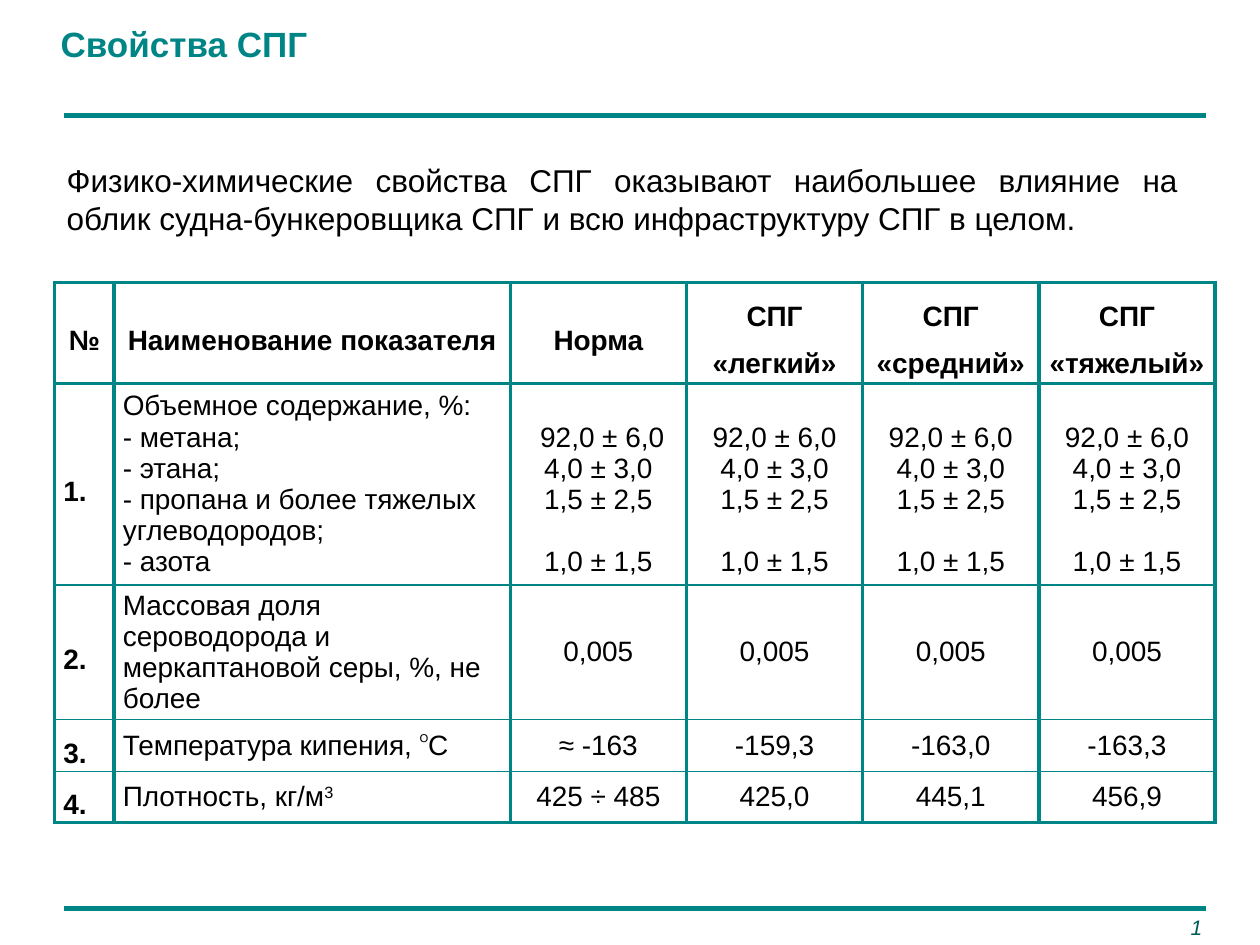
from lxml.etree import SubElement
from pptx import Presentation
from pptx.dml.color import RGBColor
from pptx.enum.shapes import MSO_CONNECTOR
from pptx.enum.text import MSO_ANCHOR as Anchor, PP_ALIGN as Align
from pptx.oxml.ns import qn
from pptx.util import Pt

TEAL, DARK_TEAL, BLACK = "008587", "00595A", "000000"
TITLE = "Свойства СПГ"
INTRO = ("Физико-химические свойства СПГ оказывают наибольшее влияние на облик "
         "судна-бункеровщика СПГ и всю инфраструктуру СПГ в целом.")
HEADER = ["№", "Наименование показателя", "Норма",
          "СПГ\n«легкий»", "СПГ\n«средний»", "СПГ\n«тяжелый»"]
SHARES = "92,0 ± 6,0\n4,0 ± 3,0\n1,5 ± 2,5\n1,0 ± 1,5"
PROPERTIES = [
    ["1.", "Объемное содержание, %:\n- метана;\n- этана;\n"
     "- пропана и более тяжелых углеводородов;\n- азота",
     " " + SHARES, SHARES, SHARES, SHARES],
    ["2.", "Массовая доля сероводорода и меркаптановой серы, %, не более"] + ["0,005"] * 4,
    ["3.", "Температура кипения, ^ᴼ^С", "≈ -163", "-159,3", "-163,0", "-163,3"],
    ["4.", "Плотность, кг/м^3^", "425 ÷ 485", "425,0", "445,1", "456,9"],
]
COLUMN_WIDTHS = [34, 226.4] + [100.7] * 4
ROW_HEIGHTS = [57.7, 114.9, 77.1, 29.7, 29.1]
RULE_LEFT, RULE_RIGHT, RULE_TOPS = 36.7, 689, (66, 519)
THICK, THIN, LINE_HEIGHT = 2.25, 1, 17.9


def rgb(value):
    return RGBColor.from_string(value)


def style(paragraph, size, color, bold=False, italic=False, align=Align.LEFT):
    paragraph.alignment = align
    font = paragraph.font
    font.name, font.size, font.bold, font.italic = "Arial", Pt(size), bold, italic
    font.color.rgb = rgb(color)


def write(frame, text, size, color, **look):
    """Fill a text frame, raising the parts of the text between carets."""
    for index, line in enumerate(text.split("\n")):
        paragraph = frame.paragraphs[0] if index == 0 else frame.add_paragraph()
        for part_index, part in enumerate(line.split("^")):
            if part:
                run = paragraph.add_run()
                run.text = part
                if part_index % 2:
                    run.font._element.set("baseline", "30000")
        style(paragraph, size, color, **look)


def add_text(slide, box, text, size, color, **look):
    frame = slide.shapes.add_textbox(*map(Pt, box)).text_frame
    frame.word_wrap = True
    write(frame, text, size, color, **look)


def add_rule(slide, top):
    rule = slide.shapes.add_connector(
        MSO_CONNECTOR.STRAIGHT, Pt(RULE_LEFT), Pt(top), Pt(RULE_RIGHT), Pt(top))
    rule.line.color.rgb = rgb(TEAL)
    rule.line.width = Pt(3)
    SubElement(rule._element.spPr, qn("a:effectLst"))


def set_borders(cell, top, bottom):
    properties = cell._tc.get_or_add_tcPr()
    widths = {"a:lnL": THICK, "a:lnR": THICK, "a:lnT": top, "a:lnB": bottom}
    for tag, width in widths.items():
        border = SubElement(properties, qn(tag), w=str(Pt(width)))
        SubElement(SubElement(border, qn("a:solidFill")), qn("a:srgbClr"), val=TEAL)


def fill_cell(cell, text, row, column):
    last = len(ROW_HEIGHTS) - 1
    set_borders(cell, THICK if row < 2 else THIN, THICK if row in (0, last) else THIN)
    cell.fill.background()
    cell.vertical_anchor = Anchor.MIDDLE
    cell.margin_left = cell.margin_right = Pt(5)
    cell.margin_top = cell.margin_bottom = 0
    heading = row == 0 or column == 0
    centered = row == 0 or column > 1
    write(cell.text_frame, text, 16, BLACK, bold=heading,
          align=Align.CENTER if centered else Align.LEFT)
    if heading:
        for paragraph in cell.text_frame.paragraphs:
            paragraph.line_spacing = 1.5
    elif row == 1 and column > 1:
        cell.vertical_anchor = Anchor.BOTTOM
        cell.margin_bottom = Pt(4)
        cell.text_frame.paragraphs[-1].space_before = Pt(LINE_HEIGHT)


def add_properties(slide):
    rows = [HEADER] + PROPERTIES
    table = slide.shapes.add_table(
        len(rows), len(HEADER), Pt(31.2), Pt(161.3),
        Pt(sum(COLUMN_WIDTHS)), Pt(sum(ROW_HEIGHTS))).table
    table.first_row = table.horz_banding = False
    for column, width in zip(table.columns, COLUMN_WIDTHS):
        column.width = Pt(width)
    for row, height in zip(table.rows, ROW_HEIGHTS):
        row.height = Pt(height)
    for row, texts in enumerate(rows):
        for column, text in enumerate(texts):
            fill_cell(table.cell(row, column), text, row, column)


def main():
    deck = Presentation()
    deck.slide_width, deck.slide_height = Pt(720), Pt(540)
    slide = deck.slides.add_slide(deck.slide_layouts[5])
    title = slide.shapes.title
    title.left, title.top, title.width, title.height = map(Pt, (27.4, 9.4, 648, 51))
    title.text_frame.vertical_anchor = Anchor.TOP
    write(title.text_frame, TITLE, 20, TEAL, bold=True)
    for top in RULE_TOPS:
        add_rule(slide, top)
    add_text(slide, (31, 88.6, 649.4, 51), INTRO, 18, BLACK, align=Align.JUSTIFY)
    add_properties(slide)
    add_text(slide, (632, 519, 62, 37.4 - 16.4), "1", 12, DARK_TEAL,
             italic=True, align=Align.RIGHT)
    deck.save("out.pptx")


if __name__ == "__main__":
    main()
